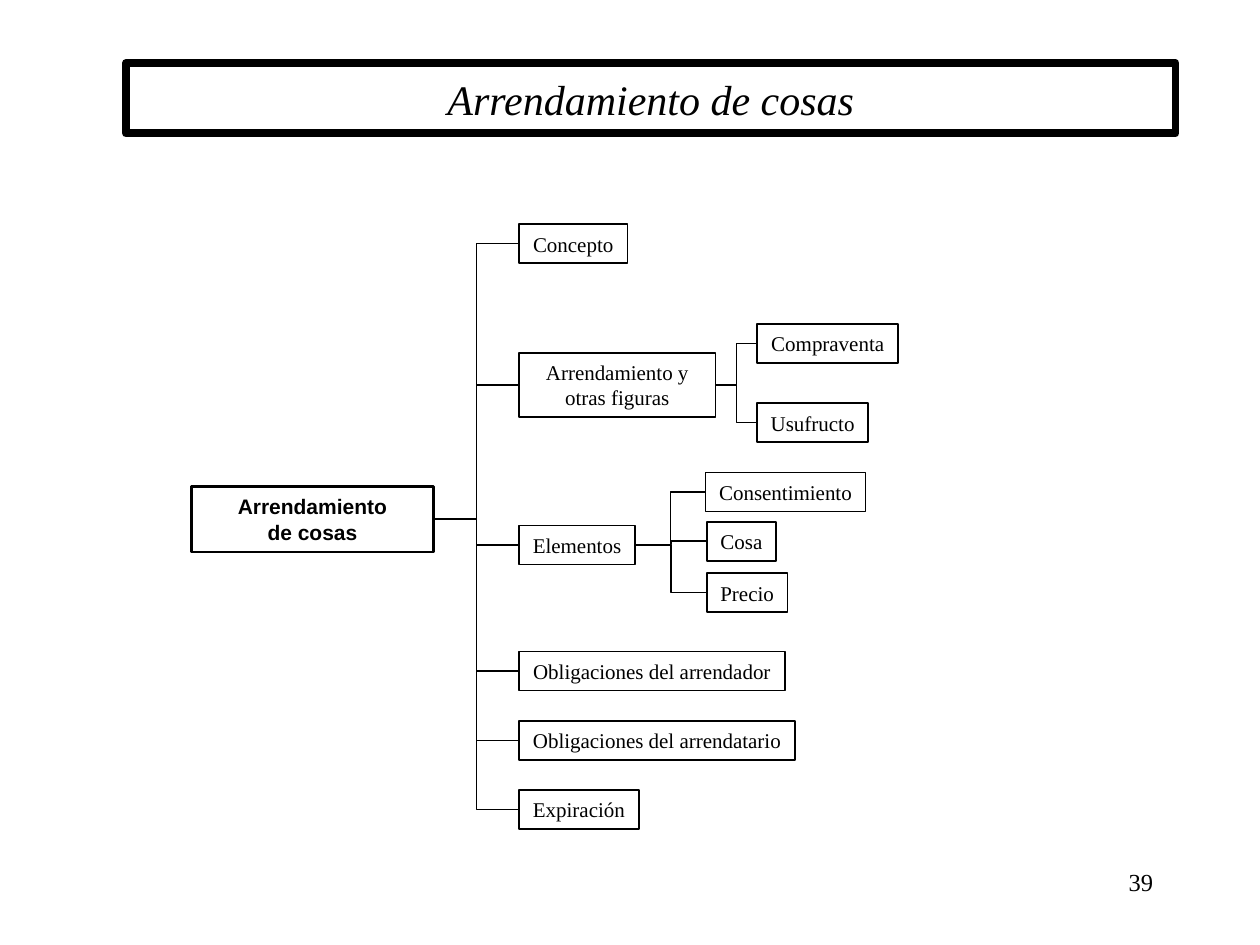
import pptx
import pptx.util
import pptx.dml.color
import pptx.enum.shapes
import pptx.enum.text
from pptx.oxml.xmlchemy import OxmlElement

Inches, Pt = pptx.util.Inches, pptx.util.Pt
ALIGN = pptx.enum.text.PP_ALIGN
COLORS = {"ink": "000000"}
SERIF, SANS = "Times New Roman", "Arial"
ROW_HEIGHT = 0.31
RIGHT_SITE, LEFT_SITE = 3, 1

TITLE = ("Arrendamiento de cosas", (1, 0.5, 8.33, 0.56))
ROOT = ("Arrendamiento\nde cosas", (1.52, 3.86, 1.92, 0.52))
PAGE_NUMBER = ("39", (7.17, 6.83, 2.08, 0.5))

# text, (left, top, width, height), children
BRANCHES = [
    ("Concepto", (4.12, 1.78, 0.86, ROW_HEIGHT), []),
    ("Arrendamiento y otras figuras", (4.12, 2.8, 1.56, 0.51), [
        ("Compraventa", (6.01, 2.57, 1.12, ROW_HEIGHT), []),
        ("Usufructo", (6.01, 3.2, 0.88, ROW_HEIGHT), []),
    ]),
    ("Elementos", (4.12, 4.17, 0.92, ROW_HEIGHT), [
        ("Consentimiento", (5.6, 3.75, 1.27, ROW_HEIGHT), []),
        ("Cosa", (5.61, 4.14, 0.55, ROW_HEIGHT), []),
        ("Precio", (5.61, 4.55, 0.64, ROW_HEIGHT), []),
    ]),
    ("Obligaciones del arrendador", (4.12, 5.17, 2.11, ROW_HEIGHT), []),
    ("Obligaciones del arrendatario", (4.12, 5.72, 2.19, ROW_HEIGHT), []),
    ("Expiración", (4.12, 6.27, 0.95, ROW_HEIGHT), []),
]


def color(name):
    return pptx.dml.color.RGBColor.from_string(COLORS[name])


def write(shape, text, size, font=SERIF, align=ALIGN.CENTER, bold=False, italic=False):
    frame = shape.text_frame
    frame.text = text
    for para in frame.paragraphs:
        para.alignment = align
        para.font.name, para.font.size = font, Pt(size)
        para.font.bold, para.font.italic = bold, italic
        para.font.color.rgb = color("ink")


def add_box(page, text, place, line_width=1, size=12, wrap=True, **style):
    box = page.shapes.add_shape(
        pptx.enum.shapes.MSO_SHAPE.RECTANGLE, *map(Inches, place))
    box.shadow.inherit = False
    box.fill.background()
    box.line.color.rgb = color("ink")
    box.line.width = Pt(line_width)
    box.text_frame.word_wrap = wrap
    box.text_frame.vertical_anchor = pptx.enum.text.MSO_ANCHOR.MIDDLE
    write(box, text, size, **style)
    return box


def link(page, parent, child):
    elbow = page.shapes.add_connector(
        pptx.enum.shapes.MSO_CONNECTOR.ELBOW, 0, 0, 0, 0)
    elbow.begin_connect(parent, RIGHT_SITE)
    elbow.end_connect(child, LEFT_SITE)
    elbow.line.color.rgb = color("ink")
    elbow.line.width = Pt(0.75)
    elbow._element.spPr.append(OxmlElement("a:effectLst"))


def add_branches(page, parent, branches):
    for text, place, children in branches:
        box = add_box(page, text, place, wrap=place[3] > ROW_HEIGHT)
        link(page, parent, box)
        add_branches(page, box, children)


def main():
    deck = pptx.Presentation()
    deck.slide_width, deck.slide_height = Inches(10), Inches(7.5)
    page = deck.slides.add_slide(deck.slide_layouts[6])

    add_box(page, *TITLE, line_width=4.5, size=24, italic=True)
    root = add_box(page, *ROOT, line_width=1.5, font=SANS, bold=True)
    add_branches(page, root, BRANCHES)

    text, place = PAGE_NUMBER
    number = page.shapes.add_textbox(*map(Inches, place))
    number.text_frame.word_wrap = True
    write(number, text, 14, align=ALIGN.RIGHT)

    deck.save("out.pptx")


if __name__ == "__main__":
    main()
